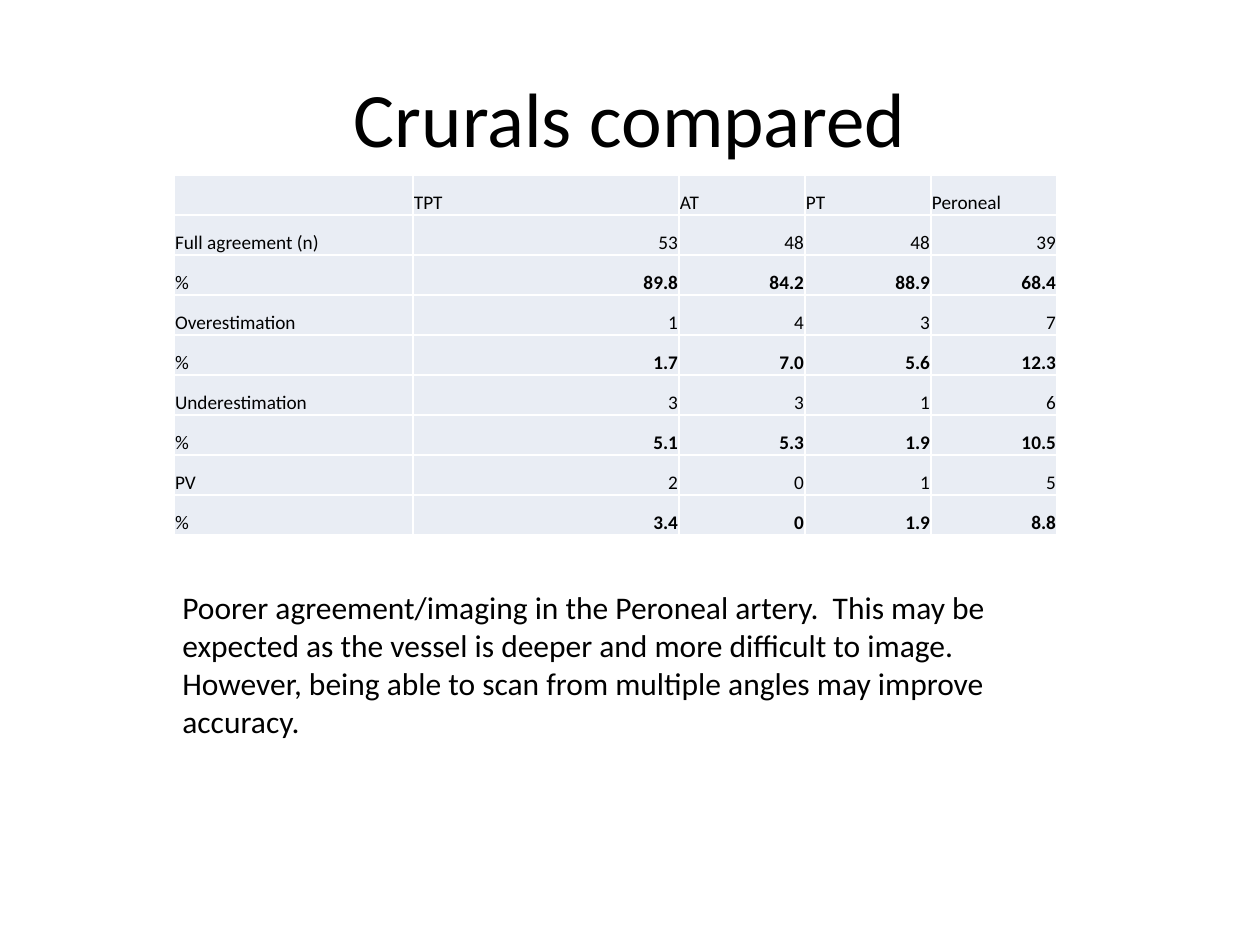
from dataclasses import dataclass

from lxml.etree import SubElement
from pptx import Presentation
from pptx.dml.color import RGBColor
from pptx.enum.text import MSO_ANCHOR, PP_ALIGN
from pptx.oxml.ns import qn
from pptx.util import Pt

PX = 914400 / 126


@dataclass(frozen=True)
class Theme:
    font: str = "Calibri"
    ink: str = "000000"
    cell: str = "E9EDF4"
    border: str = "FFFFFF"
    title: int = 44
    body: int = 18
    table: int = 11


T = Theme()


def px(n):
    return round(n * PX)


def write(tf, text, size, align=PP_ALIGN.LEFT, bold=False):
    tf.text = text
    p = tf.paragraphs[0]
    p.alignment = align
    for r in p.runs:
        r.font.name = T.font
        r.font.size = Pt(size)
        r.font.bold = bold
        r.font.color.rgb = RGBColor.from_string(T.ink)


prs = Presentation()
prs.slide_width, prs.slide_height = px(1260), px(945)
s = prs.slides.add_slide(prs.slide_layouts[6])

# Title
tf = s.shapes.add_textbox(px(63), px(38), px(1134), px(158)).text_frame
tf.word_wrap = True
tf.vertical_anchor = MSO_ANCHOR.MIDDLE
write(tf, "Crurals compared", T.title, PP_ALIGN.CENTER)

# Conclusion
tf = s.shapes.add_textbox(px(170), px(582), px(922), px(165)).text_frame
tf.word_wrap = True
write(tf, "Poorer agreement/imaging in the Peroneal artery.  This may be expected as "
          "the vessel is deeper and more difficult to image.  However, being able to "
          "scan from multiple angles may improve accuracy.", T.body)

# Agreement table
rows = [
    ["", "TPT", "AT", "PT", "Peroneal"],
    ["Full agreement (n)", "53", "48", "48", "39"],
    ["%", "89.8", "84.2", "88.9", "68.4"],
    ["Overestimation", "1", "4", "3", "7"],
    ["%", "1.7", "7.0", "5.6", "12.3"],
    ["Underestimation", "3", "3", "1", "6"],
    ["%", "5.1", "5.3", "1.9", "10.5"],
    ["PV", "2", "0", "1", "5"],
    ["%", "3.4", "0", "1.9", "8.8"],
]
widths = [239, 266, 126, 126, 126]
row_height = 40
table = s.shapes.add_table(len(rows), len(widths), px(174), px(175),
                           px(sum(widths)), px(row_height * len(rows))).table
for col, width in zip(table.columns, widths):
    col.width = px(width)

for i, row in enumerate(rows):
    table.rows[i].height = px(row_height)
    for j, text in enumerate(row):
        cell = table.cell(i, j)
        cell.margin_left = cell.margin_right = cell.margin_top = px(1)
        cell.margin_bottom = 0
        cell.vertical_anchor = MSO_ANCHOR.BOTTOM
        is_value = i > 0 and j > 0
        write(cell.text_frame, text, T.table,
              PP_ALIGN.RIGHT if is_value else PP_ALIGN.LEFT,
              bold=is_value and row[0] == "%")
        tcPr = cell._tc.get_or_add_tcPr()
        for side in ("a:lnL", "a:lnR", "a:lnT", "a:lnB"):
            ln = SubElement(tcPr, qn(side), w=str(Pt(1)))
            SubElement(SubElement(ln, qn("a:solidFill")), qn("a:srgbClr"), val=T.border)
        cell.fill.solid()
        cell.fill.fore_color.rgb = RGBColor.from_string(T.cell)

prs.save("out.pptx")
